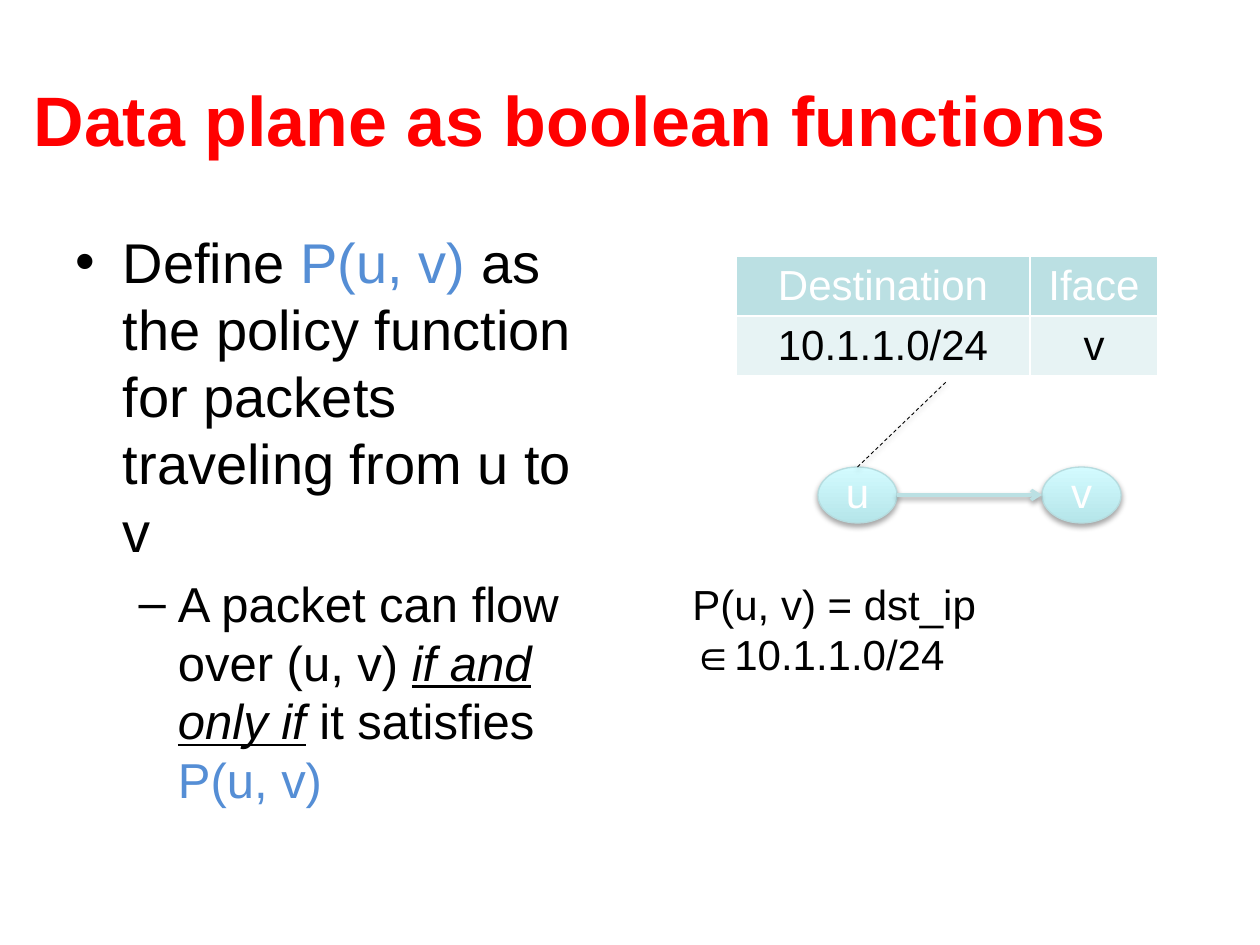
import pptx
import pptx.dml.color
import pptx.enum.dml
import pptx.enum.shapes
import pptx.enum.text
import pptx.oxml.ns
import pptx.util
from lxml import etree

RGB = pptx.dml.color.RGBColor
BLACK = RGB(0x00, 0x00, 0x00)
WHITE = RGB(0xFF, 0xFF, 0xFF)
RED = RGB(0xFF, 0x00, 0x00)
BLUE = RGB(0x55, 0x8E, 0xD5)
TEAL = RGB(0xBB, 0xE0, 0xE3)
PALE_TEAL = RGB(0xE7, 0xF3, 0xF4)
NODE_EDGE = RGB(0xB6, 0xDC, 0xDF)
NODE_BOTTOM = RGB(0xB5, 0xE5, 0xE9)
NODE_TOP = RGB(0xD3, 0xFB, 0xFF)

FONT = "Arial"
PX_PER_INCH = 126
LEFT = pptx.enum.text.PP_ALIGN.LEFT
CENTER = pptx.enum.text.PP_ALIGN.CENTER


def px(length):
    return pptx.util.Emu(round(length * 914400 / PX_PER_INCH))


def add_xml(parent, tag, **attributes):
    return etree.SubElement(parent, pptx.oxml.ns.qn(tag), attributes)


def add_shadow(shape, opacity):
    effects = add_xml(shape._element.spPr, "a:effectLst")
    shadow = add_xml(effects, "a:outerShdw", blurRad="40000", dist="22000",
                     dir="5400000", rotWithShape="0")
    color = add_xml(shadow, "a:srgbClr", val=str(BLACK))
    add_xml(color, "a:alpha", val=str(opacity * 1000))


class SlideBuilder:
    def __init__(self, slide):
        self.slide = slide
        self.shapes = slide.shapes

    def style(self, paragraph, size, color, align=LEFT, bold=False):
        paragraph.alignment = align
        font = paragraph.font
        font.name, font.bold = FONT, bold
        font.size = pptx.util.Pt(size)
        font.color.rgb = color

    def place(self, shape, left, top, width, height):
        shape.left, shape.top = px(left), px(top)
        shape.width, shape.height = px(width), px(height)
        shape.text_frame.auto_size = pptx.enum.text.MSO_AUTO_SIZE.NONE

    def title(self, text, *box):
        title = self.shapes.title
        self.place(title, *box)
        title.text_frame.text = text
        self.style(title.text_frame.paragraphs[0], 40, RED, bold=True)

    def bullets(self, items, *box):
        """Fill the body; each item is (level, size, runs), each run (text, look)."""
        body = self.slide.placeholders[1]
        self.place(body, *box)
        frame = body.text_frame
        for index, (level, size, runs) in enumerate(items):
            paragraph = frame.add_paragraph() if index else frame.paragraphs[0]
            paragraph.level = level
            self.style(paragraph, size, BLACK)
            for text, look in runs:
                run = paragraph.add_run()
                run.text = text
                if look == "function":
                    run.font.color.rgb = BLUE
                elif look == "stress":
                    run.font.italic = run.font.underline = True

    def node(self, name, left, top, width, height):
        node = self.shapes.add_shape(pptx.enum.shapes.MSO_SHAPE.OVAL,
                                     px(left), px(top), px(width), px(height))
        node.fill.gradient()
        node.fill.gradient_angle = 90
        for stop, color, position in zip(node.fill.gradient_stops,
                                         (NODE_BOTTOM, NODE_TOP), (0, 1)):
            stop.color.rgb, stop.position = color, position
        node.line.color.rgb = NODE_EDGE
        node.line.width = pptx.util.Pt(0.75)
        add_shadow(node, 35)
        frame = node.text_frame
        frame.margin_top = 0
        frame.vertical_anchor = pptx.enum.text.MSO_ANCHOR.MIDDLE
        frame.text = name
        self.style(frame.paragraphs[0], 24, WHITE, CENTER)
        return node

    def line(self, start, end, color, width, dashed=False, arrow=False):
        line = self.shapes.add_connector(pptx.enum.shapes.MSO_CONNECTOR.STRAIGHT,
                                         *map(px, start + end))
        line.line.color.rgb = color
        line.line.width = pptx.util.Pt(width)
        if dashed:
            line.line.dash_style = pptx.enum.dml.MSO_LINE.DASH
        if arrow:
            add_xml(line.line._get_or_add_ln(), "a:tailEnd", type="arrow")
        add_shadow(line, 38)
        return line

    def table(self, rows, left, top, column_widths, row_height):
        table = self.shapes.add_table(
            len(rows), len(column_widths), px(left), px(top),
            px(sum(column_widths)), px(row_height * len(rows))).table
        for column, width in zip(table.columns, column_widths):
            column.width = px(width)
        for row_index, texts in enumerate(rows):
            fill, color = (PALE_TEAL, BLACK) if row_index else (TEAL, WHITE)
            for column_index, text in enumerate(texts):
                cell = table.cell(row_index, column_index)
                self.cell_borders(cell)
                cell.fill.solid()
                cell.fill.fore_color.rgb = fill
                cell.text = text
                self.style(cell.text_frame.paragraphs[0], 24, color, CENTER)

    def cell_borders(self, cell):
        properties = cell._tc.get_or_add_tcPr()
        for side in "LRTB":
            border = add_xml(properties, "a:ln" + side, w="12700")
            add_xml(add_xml(border, "a:solidFill"), "a:srgbClr", val=str(WHITE))

    def text(self, text, *box):
        frame = self.shapes.add_textbox(*map(px, box)).text_frame
        frame.word_wrap = True
        frame.text = text
        self.style(frame.paragraphs[0], 24, BLACK)


def main():
    deck = pptx.Presentation()
    deck.slide_width, deck.slide_height = px(1260), px(945)
    builder = SlideBuilder(deck.slides.add_slide(deck.slide_layouts[1]))

    builder.title("Data plane as boolean functions", 21, 40, 1207, 158)
    builder.bullets([
        (0, 32, [("Define ", None), ("P(u, v) ", "function"),
                 ("as the policy function for packets traveling from u to v", None)]),
        (1, 28, [("A packet can flow over (u, v) ", None), ("if and only if", "stress"),
                 (" it satisfies ", None), ("P(u, v)", "function")]),
    ], 63, 221, 557, 624)

    node_top, node_width, node_height = 467, 79, 56
    u_left, v_left = 818, 1042
    middle = node_top + node_height // 2
    u_node = builder.node("u", u_left, node_top, node_width, node_height)
    builder.node("v", v_left, node_top, node_width, node_height)
    builder.line((u_left + node_width, middle), (v_left, middle), TEAL, 2, arrow=True)

    builder.table([("Destination", "Iface"), ("10.1.1.0/24", "v")],
                  736, 256, (294, 128), 60)
    builder.text("P(u, v) = dst_ip ∈10.1.1.0/24", 680, 572, 533, 63)
    table_leader = builder.line((857, node_top), (946, 382), BLACK, 0.5, dashed=True)
    table_leader.begin_connect(u_node, 0)

    deck.save("out.pptx")


if __name__ == "__main__":
    main()
